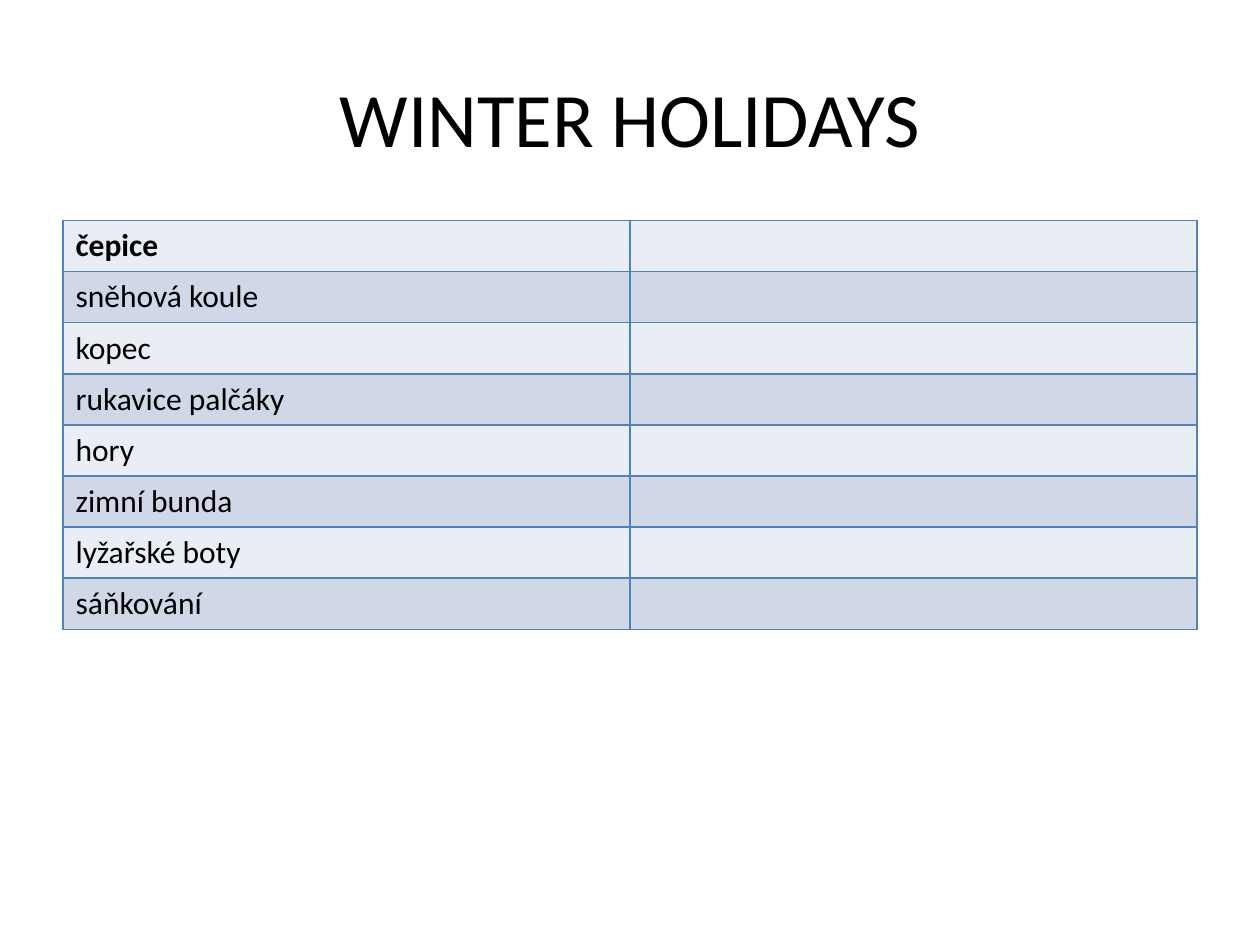
from dataclasses import dataclass

from lxml.etree import SubElement
from pptx import Presentation
from pptx.dml.color import RGBColor
from pptx.enum.text import MSO_ANCHOR, PP_ALIGN
from pptx.oxml.ns import qn
from pptx.util import Pt


@dataclass(frozen=True)
class Theme:
    font: str = "Calibri"
    title_size: int = 44
    body_size: int = 18
    text: str = "000000"
    border: str = "4F81BD"
    border_width: int = 1
    bands: tuple = ("E9EDF4", "D0D8E8")


THEME = Theme()
WORDS = [
    "čepice",
    "sněhová koule",
    "kopec",
    "rukavice palčáky",
    "hory",
    "zimní bunda",
    "lyžařské boty",
    "sáňkování",
]


def style_font(font, size, bold=False):
    font.name = THEME.font
    font.size = Pt(size)
    font.bold = bold
    font.color.rgb = RGBColor.from_string(THEME.text)


def add_title(slide, text, left, top, width, height):
    box = slide.shapes.add_textbox(Pt(left), Pt(top), Pt(width), Pt(height))
    tf = box.text_frame
    tf.word_wrap = True
    tf.vertical_anchor = MSO_ANCHOR.MIDDLE
    tf.text = text
    p = tf.paragraphs[0]
    p.alignment = PP_ALIGN.CENTER
    style_font(p.runs[0].font, THEME.title_size)


def set_borders(cell):
    """Draw all four cell edges; call before the fill, which must follow them."""
    tc_pr = cell._tc.get_or_add_tcPr()
    for edge in ("a:lnL", "a:lnR", "a:lnT", "a:lnB"):
        ln = SubElement(tc_pr, qn(edge), w=str(Pt(THEME.border_width)))
        fill = SubElement(ln, qn("a:solidFill"))
        SubElement(fill, qn("a:srgbClr"), val=THEME.border)


def add_word_table(slide, words, left, top, width, height):
    """List the words on the left, with an empty column for the answers."""
    frame = slide.shapes.add_table(
        len(words), 2, Pt(left), Pt(top), Pt(width), Pt(height))
    table = frame.table
    for row, word in enumerate(words):
        table.rows[row].height = Pt(height / len(words))
        table.cell(row, 0).text = word
        for cell in table.rows[row].cells:
            set_borders(cell)
            cell.fill.solid()
            band = THEME.bands[row % len(THEME.bands)]
            cell.fill.fore_color.rgb = RGBColor.from_string(band)
            p = cell.text_frame.paragraphs[0]
            style_font(p.font, THEME.body_size)
            for r in p.runs:
                style_font(r.font, THEME.body_size, bold=row == 0)


def main():
    prs = Presentation()
    prs.slide_width, prs.slide_height = Pt(720), Pt(540)
    slide = prs.slides.add_slide(prs.slide_layouts[6])
    add_title(slide, "WINTER HOLIDAYS", 36, 21.6, 648, 90)
    add_word_table(slide, WORDS, 36, 126, 648, 233.6)
    prs.save("out.pptx")


if __name__ == "__main__":
    main()
